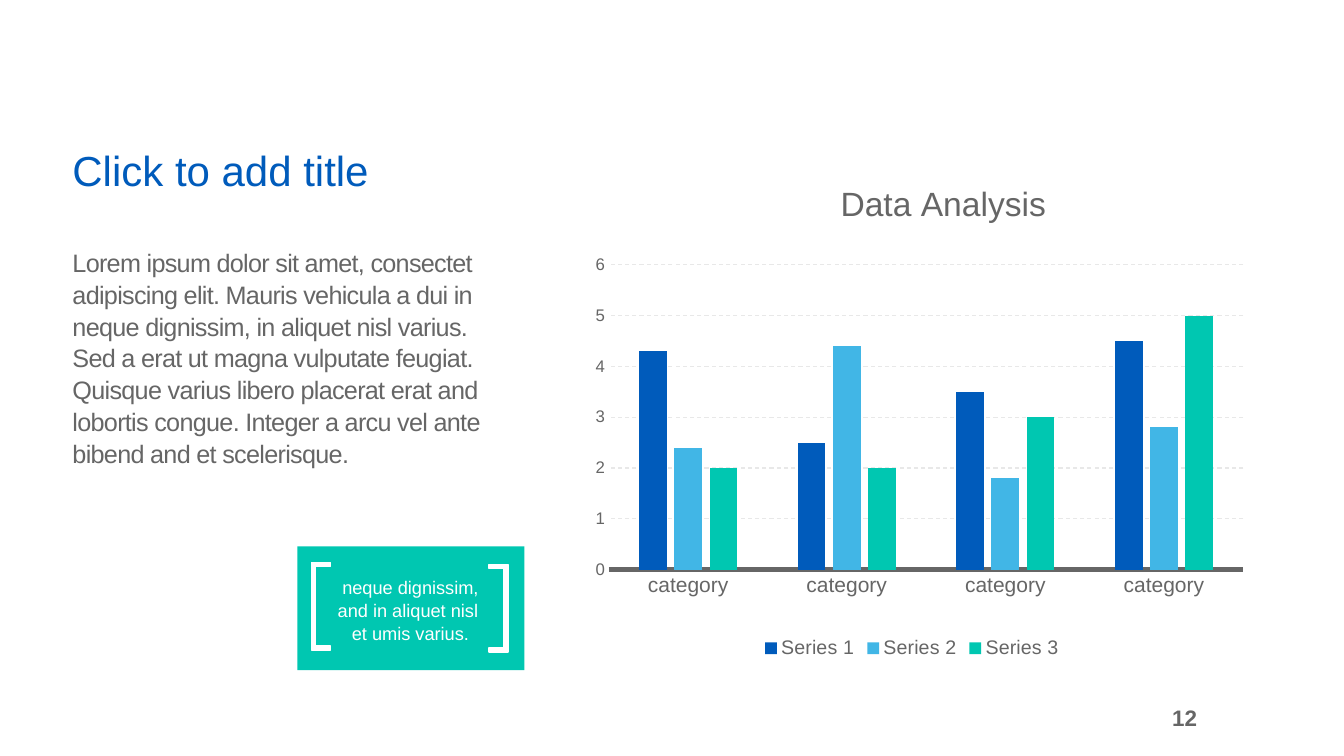
from dataclasses import dataclass

from lxml.etree import SubElement
from pptx import Presentation
from pptx.chart.data import CategoryChartData
from pptx.dml.color import RGBColor
from pptx.enum.chart import XL_CHART_TYPE, XL_LEGEND_POSITION, XL_TICK_MARK
from pptx.enum.dml import MSO_LINE
from pptx.enum.shapes import MSO_SHAPE
from pptx.enum.text import MSO_ANCHOR, PP_ALIGN
from pptx.oxml.ns import qn
from pptx.slide import Slide
from pptx.text.text import Font
from pptx.util import Inches, Pt


@dataclass(frozen=True)
class Theme:
    face: str = "Arial"
    gray: str = "666666"
    pale: str = "E8E8E8"
    blue: str = "005BBB"
    sky: str = "41B6E6"
    teal: str = "00C7B1"
    white: str = "FFFFFF"
    title: int = 30
    head: int = 24
    body: int = 18
    page: int = 16
    label: int = 15
    legend: int = 14
    quote: int = 13
    scale: int = 12


@dataclass(frozen=True)
class Note:
    text: str
    left: float
    top: float
    width: float
    height: float
    size: int
    color: str
    align: PP_ALIGN = PP_ALIGN.LEFT
    anchor: MSO_ANCHOR = MSO_ANCHOR.TOP
    lines: float = 1.0
    track: int = 0
    bold: bool = False


@dataclass(frozen=True)
class Series:
    name: str
    values: tuple[float, ...]
    color: str


@dataclass(frozen=True)
class Bracket:
    edge: float
    top: float
    turn: int


LOOK = Theme()

NOTES = [
    Note("Click to add title", 0.62, 1.44, 4.67, 0.78, LOOK.title, LOOK.blue,
         lines=0.9),
    Note("Lorem ipsum dolor sit amet, consectet adipiscing elit. Mauris "
         "vehicula a dui in neque dignissim, in aliquet nisl varius. Sed a "
         "erat ut magna vulputate feugiat. Quisque varius libero placerat "
         "erat and lobortis congue. Integer a arcu vel ante bibend and et "
         "scelerisque.", 0.62, 2.39, 4.38, 3.03, LOOK.body, LOOK.gray,
         lines=1.05, track=-50),
    Note("neque dignissim, and in aliquet nisl \vet umis varius.",
         3.21, 5.66, 1.72, 0.76, LOOK.quote, LOOK.white,
         align=PP_ALIGN.CENTER, lines=1.05),
    Note("12", 11.22, 6.83, 0.75, 0.58, LOOK.page, LOOK.gray,
         align=PP_ALIGN.RIGHT, anchor=MSO_ANCHOR.MIDDLE, bold=True),
]

DATA = [
    Series("Series 1", (4.3, 2.5, 3.5, 4.5), LOOK.blue),
    Series("Series 2", (2.4, 4.4, 1.8, 2.8), LOOK.sky),
    Series("Series 3", (2, 2, 3, 5), LOOK.teal),
]

BRACKETS = [Bracket(3.09, 5.58, 1), Bracket(5.04, 5.6, -1)]


def tint(color: str) -> RGBColor:
    return RGBColor.from_string(color)


def style(font: Font, size: int, color: str, bold: bool = False) -> None:
    font.name = LOOK.face
    font.size = Pt(size)
    font.bold = bold
    font.color.rgb = tint(color)


def add_note(slide: Slide, note: Note) -> None:
    box = slide.shapes.add_textbox(Inches(note.left), Inches(note.top),
                                   Inches(note.width), Inches(note.height))
    frame = box.text_frame
    frame.word_wrap = True
    frame.vertical_anchor = note.anchor
    frame.text = note.text
    para = frame.paragraphs[0]
    para.alignment = note.align
    para.line_spacing = note.lines
    for run in para.runs:
        style(run.font, note.size, note.color, note.bold)
        if note.track:
            run.font._element.set("spc", str(note.track))


def add_panel(slide: Slide) -> None:
    panel = slide.shapes.add_shape(MSO_SHAPE.RECTANGLE, Inches(2.95),
                                   Inches(5.42), Inches(2.25), Inches(1.23))
    panel.shadow.inherit = False
    panel.fill.solid()
    panel.fill.fore_color.rgb = tint(LOOK.teal)
    panel.line.fill.background()


def add_bracket(slide: Slide, item: Bracket) -> None:
    wide, high, thick = 0.19, 0.87, 0.04
    path = [(wide, 0), (0, 0), (0, high), (wide, high),
            (wide, high - thick), (thick, high - thick),
            (thick, thick), (wide, thick)]
    spots = [(Inches(item.edge + item.turn * x), Inches(item.top + y))
             for x, y in path]
    pen = slide.shapes.build_freeform(*spots[0])
    pen.add_line_segments(spots[1:], close=True)
    shape = pen.convert_to_shape()
    shape.shadow.inherit = False
    shape.fill.solid()
    shape.fill.fore_color.rgb = tint(LOOK.white)
    shape.line.color.rgb = tint(LOOK.white)
    shape.line.width = Pt(1)


def place(layout, **parts: object) -> None:
    """Fix a chart part at shares of the chart's size."""
    manual = SubElement(layout, qn("c:manualLayout"))
    for tag, value in parts.items():
        SubElement(manual, qn(f"c:{tag}")).set("val", str(value))


def add_graph(slide: Slide) -> None:
    data = CategoryChartData()
    data.categories = ["category"] * 4
    for item in DATA:
        data.add_series(item.name, item.values)
    chart = slide.shapes.add_chart(
        XL_CHART_TYPE.COLUMN_CLUSTERED, Inches(5.55), Inches(1.7),
        Inches(6.99), Inches(4.88), data).chart
    style(chart.font, 10, LOOK.gray)

    # Heading and legend
    chart.has_title = True
    title = chart.chart_title
    title.text_frame.text = "Data Analysis"
    style(title.text_frame.paragraphs[0].runs[0].font, LOOK.head, LOOK.gray)
    place(title._element.find(qn("c:layout")),
          xMode="edge", yMode="edge", x=0.39, y=0.01)
    chart.has_legend = True
    chart.legend.position = XL_LEGEND_POSITION.BOTTOM
    chart.legend.include_in_layout = False
    style(chart.legend.font, LOOK.legend, LOOK.gray)

    # Columns
    plot = chart.plots[0]
    plot.vary_by_categories = False
    plot.gap_width = 219
    plot.overlap = -27
    for series, item in zip(plot.series, DATA):
        series.format.fill.solid()
        series.format.fill.fore_color.rgb = tint(item.color)

    # Axes and grid
    cat, val = chart.category_axis, chart.value_axis
    for axis, size in ((cat, LOOK.label), (val, LOOK.scale)):
        axis.major_tick_mark = axis.minor_tick_mark = XL_TICK_MARK.NONE
        style(axis.tick_labels.font, size, LOOK.gray)
    cat.format.line.color.rgb = tint(LOOK.gray)
    cat.format.line.width = Pt(3.25)
    val.minimum_scale, val.maximum_scale, val.major_unit = 0, 6, 1
    val.format.line.fill.background()
    grid = val.major_gridlines.format.line
    grid.color.rgb = tint(LOOK.pale)
    grid.width = Pt(0.75)
    grid.dash_style = MSO_LINE.DASH

    # Plot area
    area = plot._element.getparent()
    layout = area.find(qn("c:layout"))
    if layout is None:
        layout = SubElement(area, qn("c:layout"))
        area.insert(0, layout)
    place(layout, layoutTarget="inner", xMode="edge", yMode="edge",
          x=0.07, y=0.19, w=0.9, h=0.62)


def main() -> None:
    deck = Presentation()
    deck.slide_width, deck.slide_height = Inches(13.33), Inches(7.5)
    slide = deck.slides.add_slide(deck.slide_layouts[6])
    add_graph(slide)
    add_panel(slide)
    for item in BRACKETS:
        add_bracket(slide, item)
    for note in NOTES:
        add_note(slide, note)
    deck.save("out.pptx")


if __name__ == "__main__":
    main()
